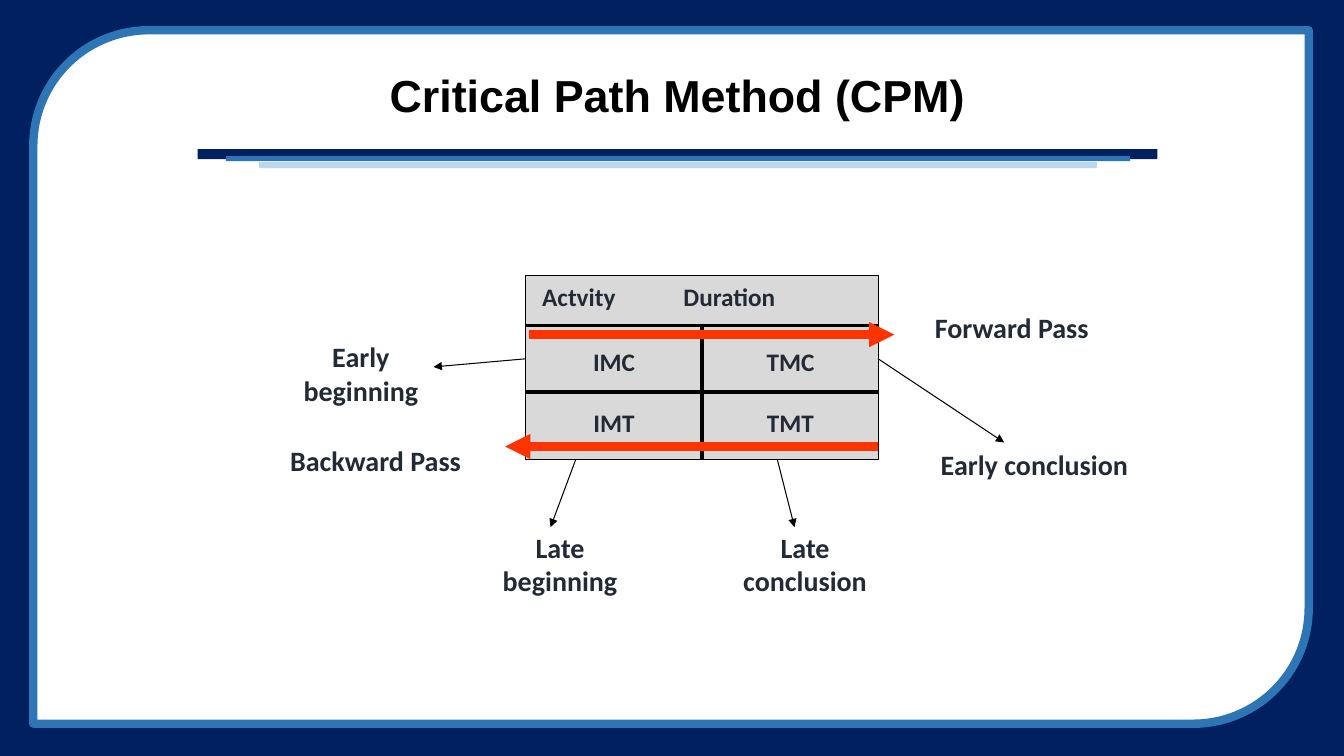
from dataclasses import dataclass
from lxml import etree
from pptx import Presentation
from pptx.dml.color import RGBColor
from pptx.enum.shapes import MSO_CONNECTOR, MSO_SHAPE
from pptx.enum.text import MSO_ANCHOR, MSO_AUTO_SIZE, PP_ALIGN
from pptx.oxml.ns import qn
from pptx.util import Inches, Pt

RECT, FRAME = MSO_SHAPE.RECTANGLE, MSO_SHAPE.ROUND_2_DIAG_RECTANGLE
LINE = MSO_CONNECTOR.STRAIGHT
LEFT, CENTER = PP_ALIGN.LEFT, PP_ALIGN.CENTER
TOP, MIDDLE = MSO_ANCHOR.TOP, MSO_ANCHOR.MIDDLE
GROW, FIXED = MSO_AUTO_SIZE.SHAPE_TO_FIT_TEXT, MSO_AUTO_SIZE.NONE


@dataclass(frozen=True)
class Theme:
    navy: str = "002060"
    blue: str = "2E75B6"
    pale: str = "BDD7EE"
    white: str = "FFFFFF"
    black: str = "000000"
    gray: str = "D9D9D9"
    ink: str = "222A35"
    red: str = "FF3300"
    head: str = "Arial"
    body: str = "Calibri"
    title: int = 32
    label: int = 20
    cell: int = 18


T = Theme()


def assign(item, values):
    for name, value in values.items():
        setattr(item, name, value)


def box(slide, area, fill, kind=RECT, line=None, width=0):
    shape = slide.shapes.add_shape(kind, *map(Inches, area))
    shape.shadow.inherit = False
    shape.fill.solid()
    shape.fill.fore_color.rgb = RGBColor.from_string(fill)
    if line:
        shape.line.color.rgb = RGBColor.from_string(line)
        shape.line.width = Pt(width)
    else:
        shape.line.fill.background()


def rule(slide, start, end, width, color=T.black, arrow=False):
    link = slide.shapes.add_connector(LINE, *map(Inches, start + end))
    link.line.color.rgb = RGBColor.from_string(color)
    link.line.width = Pt(width)
    if arrow:
        etree.SubElement(link.line._ln, qn("a:tailEnd"), type="triangle")
    etree.SubElement(link._element.spPr, qn("a:effectLst"))


def style(frame, text, size, font=T.body, color=T.ink, align=CENTER,
          anchor=TOP, fit=GROW, wrap=True, tab=None):
    assign(frame, dict(text=text, word_wrap=wrap, auto_size=fit,
                       vertical_anchor=anchor))
    para = frame.paragraphs[0]
    para.alignment = align
    if tab:
        tabs = etree.SubElement(para._p.get_or_add_pPr(), qn("a:tabLst"))
        etree.SubElement(tabs, qn("a:tab"), pos=str(Inches(tab)), algn="l")
    for run in para.runs:
        assign(run.font, dict(name=font, size=Pt(size), bold=True))
        run.font.color.rgb = RGBColor.from_string(color)
    return para


def label(slide, area, text, size=T.label, **extra):
    shape = slide.shapes.add_textbox(*map(Inches, area))
    style(shape.text_frame, text, size, **extra)


def header(slide, text):
    # Frame behind the title
    box(slide, (0, 0, 13.33, 7.5), T.navy)
    box(slide, (0.33, 0.3, 12.65, 6.88), T.white, FRAME, T.blue, 6)

    # Stepped bars under the title
    for left, top, width, high, fill in (
            (1.96, 1.48, 9.52, 0.1, T.navy),
            (2.24, 1.55, 8.97, 0.05, T.blue),
            (2.57, 1.61, 8.31, 0.06, T.pale)):
        box(slide, (left, top, width, high), fill)

    # Title in front of the frame
    title = slide.shapes.title
    slide.shapes._spTree.append(title._element)
    assign(title, dict(left=Inches(1.96), top=Inches(0.49),
                       width=Inches(9.52), height=Inches(0.97)))
    para = style(title.text_frame, text, T.title, T.head, T.black,
                 anchor=MIDDLE, fit=FIXED)
    para.line_spacing = 0.9


def node(slide):
    left, mid, right = 5.21, 6.96, 8.71
    top, first, second, base = 2.73, 3.23, 3.89, 4.56

    # Activity box and its grid
    box(slide, (left, top, right - left, base - top), T.gray,
        line=T.black, width=0.75)
    rule(slide, (left, first), (right, first), 2.25)
    rule(slide, (left, second), (right, second), 3)
    rule(slide, (mid, first), (mid, base), 3)

    # Texts in the box
    label(slide, (5.28, 2.74, 3.47, 0.4), "Actvity\tDuration", T.cell,
          align=LEFT, wrap=False, tab=1.4)
    for row, names in enumerate((("IMC", "TMC"), ("IMT", "TMT"))):
        for col, name in enumerate(names):
            area = (5.38 + 1.75 * col, 3.39 + 0.6 * row, 1.42, 0.4)
            label(slide, area, name, T.cell)

    # Thin arrows to the labels
    for start, end in (((left, 3.56), (4.3, 3.64)),
                       ((right, 3.56), (9.96, 4.39)),
                       ((5.71, base), (5.46, 5.23)),
                       ((7.71, base), (7.88, 5.23))):
        rule(slide, start, end, 0.75, arrow=True)

    # Thick arrows for the two passes
    rule(slide, (5.25, 3.32), (8.87, 3.32), 6, T.red, True)
    rule(slide, (right, 4.43), (5.01, 4.43), 6, T.red, True)


def main():
    deck = Presentation()
    assign(deck, dict(slide_width=Inches(13.33), slide_height=Inches(7.5)))
    slide = deck.slides.add_slide(deck.slide_layouts[5])

    header(slide, "Critical Path Method (CPM)")
    node(slide)

    # Labels around the box
    for area, text in (
            ((2.65, 3.32, 1.86, 0.77), "Early beginning"),
            ((9.21, 4.39, 2.1, 0.77), "Early conclusion"),
            ((4.62, 5.21, 1.87, 0.77), "Late beginning"),
            ((7.05, 5.21, 1.87, 0.77), "Late conclusion"),
            ((8.46, 3.03, 3.15, 0.43), "Forward Pass"),
            ((2.15, 4.35, 3.15, 0.43), "Backward Pass")):
        label(slide, area, text)

    deck.save("out.pptx")


if __name__ == "__main__":
    main()
